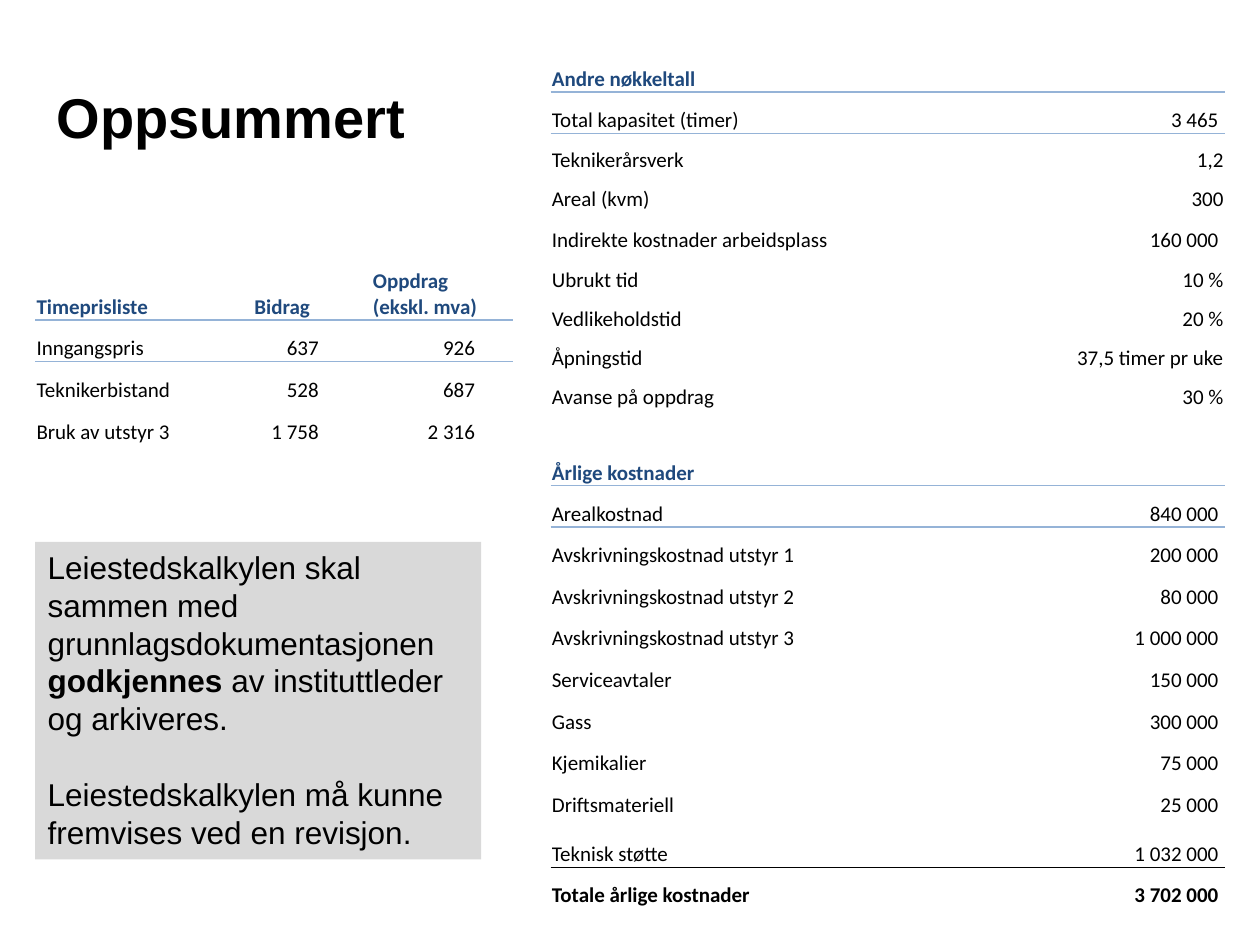
from typing import NamedTuple

from lxml.etree import SubElement
from pptx import Presentation
from pptx.dml.color import RGBColor
from pptx.enum.shapes import MSO_SHAPE as Preset
from pptx.enum.text import MSO_ANCHOR as Anchor, PP_ALIGN as Align
from pptx.oxml import parse_xml
from pptx.oxml.ns import nsdecls, qn
from pptx.util import Inches, Pt

COLORS = {"ink": "000000", "heading": "1F497D", "rule": "95B3D7", "panel": "D9D9D9"}
GRID_COLUMNS, GRID_ROWS = 100, 75
UNIT = Inches(10) // GRID_COLUMNS
NO_STYLE = "{2D5ABB26-0587-4C30-8999-92F81FD0307C}"

TITLE = {"size": Pt(32), "name": "Arial", "bold": True}
NOTE = {"size": Pt(18), "name": "Arial", "bold": False}
STRONG = NOTE | {"bold": True}
BODY = {"size": Pt(12), "name": "Calibri", "bold": False}
BOLD = BODY | {"bold": True}


class Area(NamedTuple):
    """Left, top, width and height in grid units."""
    left: float
    top: float
    width: float
    height: float

    def emu(self) -> list[int]:
        return [round(length * UNIT) for length in self]


class Rule(NamedTuple):
    color: str
    points: float


HEADING_RULE = Rule("rule", 1)
TOTAL_RULE = Rule("ink", 0.5)


class Row(NamedTuple):
    """A table line; height in grid units, insets on the right in inches per cell."""
    cells: tuple[str, ...]
    height: float = 3.3
    font: dict = BODY
    color: str = "ink"
    spacing: float | None = 1.5
    rule: Rule | None = None
    insets: tuple[float, ...] = (0.01, 0.01)
    values_align: Align = Align.RIGHT


def heading(*cells: str, height: float, spacing: float | None = None) -> Row:
    return Row(cells, height, BOLD, "heading", spacing, HEADING_RULE,
               (0.01,) * len(cells), Align.LEFT)


def price(*cells: str) -> Row:
    return Row(cells, spacing=None, insets=(0.01, 0.42, 0.3))


def figure(label: str, value: str) -> Row:
    return Row((label, value), 2.9)


def amount(label: str, value: str, **options) -> Row:
    return Row((label, value), insets=(0.01, 0.05), **options)


PRICES = [
    heading("Timeprisliste", "Bidrag", "Oppdrag\n(ekskl. mva)", height=4.7),
    price("Inngangspris", "637", "926"),
    price("Teknikerbistand", "528", "687"),
    price("Bruk av utstyr 3", "1 758", "2 316"),
]
KEY_FIGURES = [
    heading("Andre nøkkeltall", "", height=2.1),
    amount("Total kapasitet (timer)", "3 465"),
    figure("Teknikerårsverk", "1,2"),
    figure("Areal (kvm)", "300"),
    amount("Indirekte kostnader arbeidsplass", "160 000"),
    figure("Ubrukt tid", "10 %"),
    figure("Vedlikeholdstid", "20 %"),
    figure("Åpningstid", "37,5 timer pr uke"),
    figure("Avanse på oppdrag", "30 %"),
    Row(("", ""), 2.9, spacing=None),
    heading("Årlige kostnader", "", height=2.9, spacing=1.5),
    amount("Arealkostnad", "840 000"),
    amount("Avskrivningskostnad utstyr 1", "200 000"),
    amount("Avskrivningskostnad utstyr 2", "80 000"),
    amount("Avskrivningskostnad utstyr 3", "1 000 000"),
    amount("Serviceavtaler", "150 000"),
    amount("Gass", "300 000"),
    amount("Kjemikalier", "75 000"),
    amount("Driftsmateriell", "25 000"),
    amount("Teknisk støtte", "1 032 000", height=3.9, rule=TOTAL_RULE),
    amount("Totale årlige kostnader", "3 702 000", font=BOLD, spacing=None),
]
NOTE_PARAGRAPHS = [
    [("Leiestedskalkylen skal sammen med grunnlagsdokumentasjonen ", NOTE),
     ("godkjennes", STRONG),
     (" av instituttleder og arkiveres.", NOTE)],
    [("Leiestedskalkylen må kunne fremvises ved en revisjon.", NOTE)],
]


def add_run(paragraph, text: str, font: dict, color: str = "ink") -> None:
    run = paragraph.add_run()
    run.text = text
    for attribute, value in font.items():
        setattr(run.font, attribute, value)
    run.font.color.rgb = RGBColor.from_string(COLORS[color])


def add_border(cell, side: str, rule: Rule) -> None:
    cell._tc.get_or_add_tcPr().insert(0, parse_xml(
        f'<a:{side} {nsdecls("a")} w="{Pt(rule.points)}"><a:solidFill>'
        f'<a:srgbClr val="{COLORS[rule.color]}"/></a:solidFill></a:{side}>'))


def fill_cell(cell, text: str, row: Row, column: int) -> None:
    margins = {"margin_left": 0.01, "margin_top": 0.01, "margin_bottom": 0,
               "margin_right": row.insets[column]}
    for side, inches in margins.items():
        setattr(cell, side, Inches(inches))
    cell.vertical_anchor = Anchor.BOTTOM
    cell.fill.background()
    frame = cell.text_frame
    for index, line in enumerate(text.split("\n")):
        paragraph = frame.add_paragraph() if index else frame.paragraphs[0]
        paragraph.alignment = row.values_align if column else Align.LEFT
        if line:
            paragraph.line_spacing = row.spacing
            add_run(paragraph, line, row.font, row.color)
        else:
            # An empty cell takes its height from the end-of-paragraph size
            SubElement(paragraph._p, qn("a:endParaRPr"), sz="1200")


def add_price_table(slide, area: Area, widths: list[float], rows: list[Row]) -> None:
    table = slide.shapes.add_table(len(rows), len(widths), *area.emu()).table
    table.first_row = table.horz_banding = False
    table._tbl.tblPr.find(qn("a:tableStyleId")).text = NO_STYLE
    for column, width in zip(table.columns, widths):
        column.width = round(width * UNIT)
    for index, row in enumerate(rows):
        table.rows[index].height = round(row.height * UNIT)
        for column, text in enumerate(row.cells):
            cell = table.cell(index, column)
            fill_cell(cell, text, row, column)
            if row.rule:
                add_border(cell, "a:lnB"[2:], row.rule)
                add_border(table.cell(index + 1, column), "lnT", row.rule)


def add_title(slide, area: Area, text: str) -> None:
    frame = slide.shapes.add_textbox(*area.emu()).text_frame
    frame.word_wrap = True
    frame.vertical_anchor = Anchor.MIDDLE
    add_run(frame.paragraphs[0], text, TITLE)


def add_note(slide, area: Area) -> None:
    panel = slide.shapes.add_shape(Preset.RECTANGLE, *area.emu())
    panel.shadow.inherit = False
    panel.fill.solid()
    panel.fill.fore_color.rgb = RGBColor.from_string(COLORS["panel"])
    panel.line.fill.background()
    frame = panel.text_frame
    frame.word_wrap = True
    frame.vertical_anchor = Anchor.TOP
    for index, runs in enumerate(NOTE_PARAGRAPHS):
        paragraph = frame.add_paragraph() if index else frame.paragraphs[0]
        paragraph.alignment = Align.LEFT
        if index:
            paragraph.space_before = Pt(21.6)
        for text, font in runs:
            add_run(paragraph, text, font)


def main() -> None:
    deck = Presentation()
    deck.slide_width, deck.slide_height = GRID_COLUMNS * UNIT, GRID_ROWS * UNIT
    slide = deck.slides.add_slide(deck.slide_layouts[6])
    add_title(slide, Area(3.5, 3, 94.5, 12.5), "Oppsummert")
    add_price_table(slide, Area(2.8, 20.7, 37.8, 14.4), [17.3, 9.4, 11.2], PRICES)
    add_price_table(slide, Area(43.7, 5.2, 53.5, 67.2), [34.6, 18.9], KEY_FIGURES)
    add_note(slide, Area(2.8, 43, 35.4, 25.2))
    deck.save("out.pptx")


if __name__ == "__main__":
    main()
